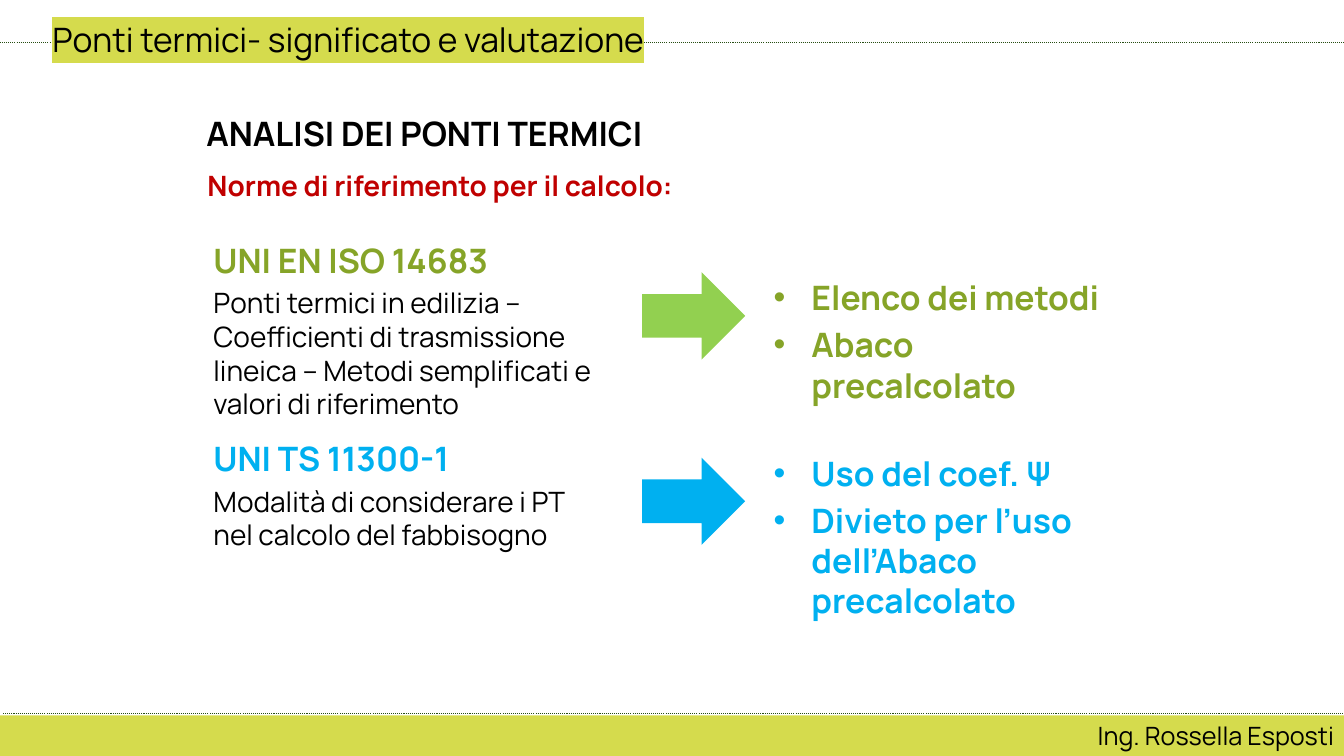
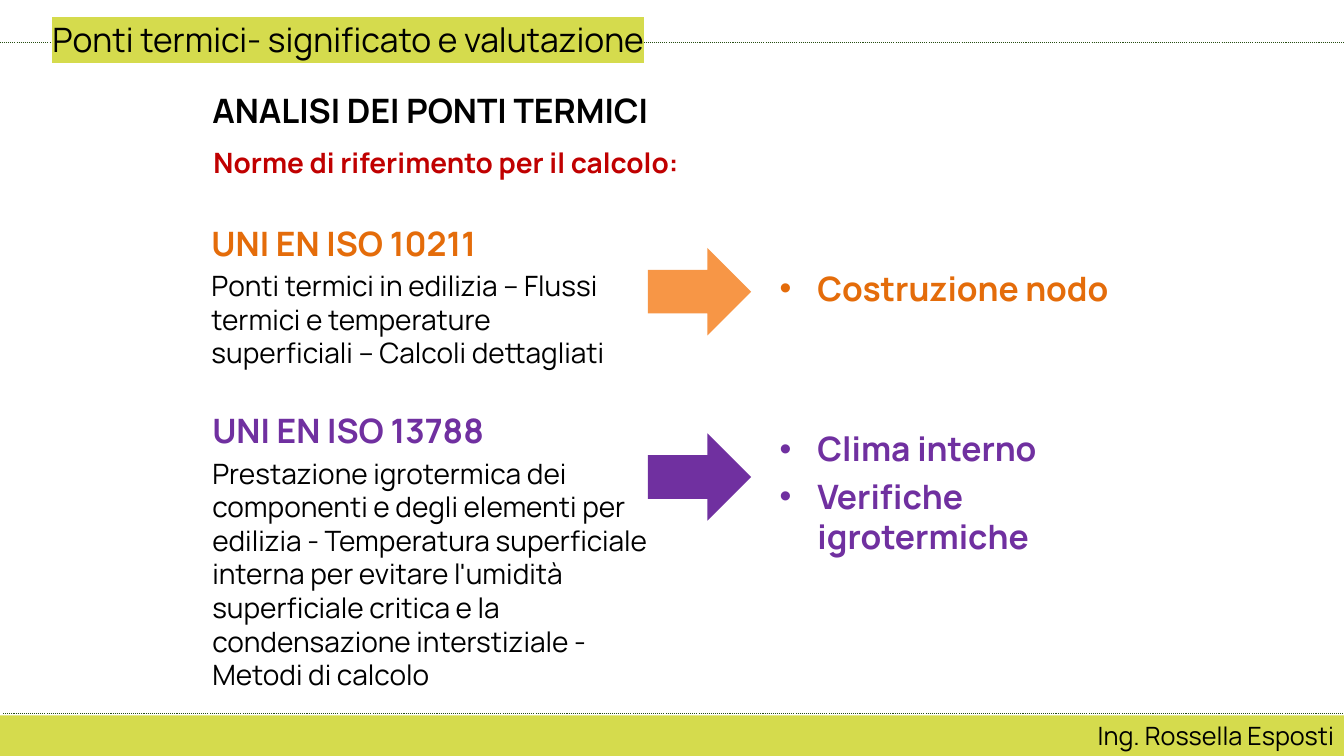
from lxml.etree import SubElement
from pptx import Presentation
from pptx.dml.color import RGBColor
from pptx.enum.dml import MSO_LINE_DASH_STYLE as Dash
from pptx.enum.shapes import MSO_CONNECTOR, MSO_SHAPE
from pptx.enum.text import MSO_ANCHOR, PP_ALIGN
from pptx.oxml.ns import qn
from pptx.util import Cm, Pt

FONT = "Manrope"
BLACK = RGBColor(0x00, 0x00, 0x00)
LIME = RGBColor(0xD5, 0xDB, 0x4D)
FOREST = RGBColor(0x27, 0x4E, 0x13)
RED = RGBColor(0xC0, 0x00, 0x00)
OLIVE = RGBColor(0x86, 0xA4, 0x28)
GREEN = RGBColor(0x92, 0xD0, 0x50)
SKY = RGBColor(0x00, 0xB0, 0xF0)
ORANGE = RGBColor(0xE4, 0x6C, 0x0A)
APRICOT = RGBColor(0xF7, 0x96, 0x46)
PURPLE = RGBColor(0x70, 0x30, 0xA0)

WIDTH, HEIGHT = Cm(33.87), Cm(19.05)
BAND_HEIGHT = Cm(1.02)


def style(paragraph, size, color, bold=False):
    """Set the font of every run in a paragraph."""
    for run in paragraph.runs:
        run.font.name = FONT
        run.font.size = Pt(size)
        run.font.bold = bold
        run.font.color.rgb = color


def add_text(slide, left, top, width, height, lines):
    """Add a wrapped text box from (text, size, color, bold) lines."""
    box = slide.shapes.add_textbox(left, top, width, height)
    frame = box.text_frame
    frame.word_wrap = True
    frame.text = "\n".join(line[0] for line in lines)
    for index, (paragraph, line) in enumerate(zip(frame.paragraphs, lines)):
        style(paragraph, *line[1:])
        if index:
            paragraph.space_before = Pt(line[1] * 0.2)
    return frame


def indent(paragraph, hanging, bullet=None):
    """Give a paragraph a hanging indent and an optional bullet."""
    properties = paragraph._p.get_or_add_pPr()
    properties.set("marL", str(hanging))
    properties.set("indent", str(-hanging))
    if bullet:
        SubElement(properties, qn("a:buFont")).set("typeface", "Arial")
        SubElement(properties, qn("a:buChar")).set("char", bullet)


def highlight(run, color):
    """Put a highlight colour behind a run."""
    properties = run._r.get_or_add_rPr()
    mark = SubElement(properties, qn("a:highlight"))
    SubElement(mark, qn("a:srgbClr")).set("val", str(color))
    properties.find(qn("a:solidFill")).addnext(mark)


def add_dotted_rule(slide, left, top):
    """Draw a dotted line as wide as the slide."""
    rule = slide.shapes.add_connector(
        MSO_CONNECTOR.STRAIGHT, left, top, left + WIDTH, top)
    rule.line.color.rgb = FOREST
    rule.line.width = Pt(0.75)
    rule.line.dash_style = Dash.ROUND_DOT
    SubElement(rule._element.spPr, qn("a:effectLst"))


def add_solid(slide, kind, left, top, width, height, color):
    """Add a flat filled shape without outline."""
    solid = slide.shapes.add_shape(kind, left, top, width, height)
    solid.shadow.inherit = False
    solid.fill.solid()
    solid.fill.fore_color.rgb = color
    solid.line.fill.background()
    return solid


def add_frame(slide):
    """Draw the footer band, the dotted rules and the running title."""
    band = add_solid(slide, MSO_SHAPE.RECTANGLE, 0, HEIGHT - BAND_HEIGHT,
                     WIDTH, BAND_HEIGHT, LIME)
    footer = band.text_frame
    footer.text = "Ing. Rossella Esposti"
    footer.vertical_anchor = MSO_ANCHOR.MIDDLE
    footer.margin_top = footer.margin_bottom = Cm(0.25)
    footer.paragraphs[0].alignment = PP_ALIGN.RIGHT
    style(footer.paragraphs[0], 18, BLACK)
    add_dotted_rule(slide, Cm(0.08), Cm(17.98))
    add_dotted_rule(slide, 0, Cm(1.07))
    title = add_text(slide, Cm(1.07), Cm(0.36), Cm(17), Cm(1.12),
                     [("Ponti termici- significato e valutazione", 24, BLACK, False)])
    highlight(title.paragraphs[0].runs[0], LIME)


def add_headings(slide, left, top):
    """Add the slide heading and its red subheading."""
    add_text(slide, left, top, Cm(23.27), Cm(1.5),
             [("ANALISI DEI PONTI TERMICI", 24, BLACK, True)])
    subheading = add_text(slide, left + Cm(0.03), top + Cm(1.4), Cm(24.3), Cm(1.12),
                          [("Norme di riferimento per il calcolo:", 20, RED, True)])
    indent(subheading.paragraphs[0], Cm(1.27))


def add_standard(slide, left, top, width, code, subject, color):
    """Add the code of a standard and what it covers."""
    add_text(slide, left, top, width, Cm(3.6),
             [(code, 24, color, True), (subject, 20, BLACK, False)])


def add_outcome(slide, left, arrow_top, list_top, width, points, color, arrow_color):
    """Add an arrow and the bulleted points it leads to."""
    add_solid(slide, MSO_SHAPE.RIGHT_ARROW, left, arrow_top,
              Cm(2.6), Cm(2.2), arrow_color)
    frame = add_text(slide, left + Cm(3.07), list_top, width, Cm(2.9),
                     [(point, 24, color, True) for point in points])
    for paragraph in frame.paragraphs:
        indent(paragraph, Cm(0.95), "•")


def add_simplified_methods(slide):
    """Fill the slide on simplified methods."""
    add_headings(slide, Cm(4.95), Cm(2.72))
    add_standard(slide, Cm(5.13), Cm(5.92), Cm(11.05), "UNI EN ISO 14683",
                 "Ponti termici in edilizia – Coefficienti di trasmissione lineica"
                 " – Metodi semplificati e valori di riferimento", OLIVE)
    add_outcome(slide, Cm(16.18), Cm(6.86), Cm(6.86), Cm(9.32),
                ["Elenco dei metodi", "Abaco precalcolato"], OLIVE, GREEN)
    add_standard(slide, Cm(5.13), Cm(10.92), Cm(9.65), "UNI TS 11300-1",
                 "Modalità di considerare i PT nel calcolo del fabbisogno", SKY)
    add_outcome(slide, Cm(16.18), Cm(11.53), Cm(11.28), Cm(10.03),
                ["Uso del coef. Ψ", "Divieto per l’uso dell’Abaco precalcolato"],
                SKY, SKY)


def add_detailed_methods(slide):
    """Fill the slide on detailed calculation."""
    add_headings(slide, Cm(5.1), Cm(2.13))
    add_standard(slide, Cm(5.08), Cm(5.49), Cm(10.46), "UNI EN ISO 10211",
                 "Ponti termici in edilizia – Flussi termici e temperature"
                 " superficiali – Calcoli dettagliati", ORANGE)
    add_outcome(slide, Cm(16.33), Cm(6.25), Cm(6.63), Cm(9.32),
                ["Costruzione nodo"], ORANGE, APRICOT)
    add_standard(slide, Cm(5.1), Cm(10.21), Cm(11.63), "UNI EN ISO 13788",
                 "Prestazione igrotermica dei componenti e degli elementi per edilizia"
                 " - Temperatura superficiale interna per evitare l'umidità"
                 " superficiale critica e la condensazione interstiziale"
                 " - Metodi di calcolo", PURPLE)
    add_outcome(slide, Cm(16.33), Cm(10.92), Cm(10.67), Cm(10.03),
                ["Clima interno", "Verifiche igrotermiche"], PURPLE, PURPLE)


def main():
    """Build and save the presentation."""
    deck = Presentation()
    deck.slide_width, deck.slide_height = WIDTH, HEIGHT
    for fill_content in (add_simplified_methods, add_detailed_methods):
        slide = deck.slides.add_slide(deck.slide_layouts[6])
        add_frame(slide)
        fill_content(slide)
    deck.save("out.pptx")


if __name__ == "__main__":
    main()
